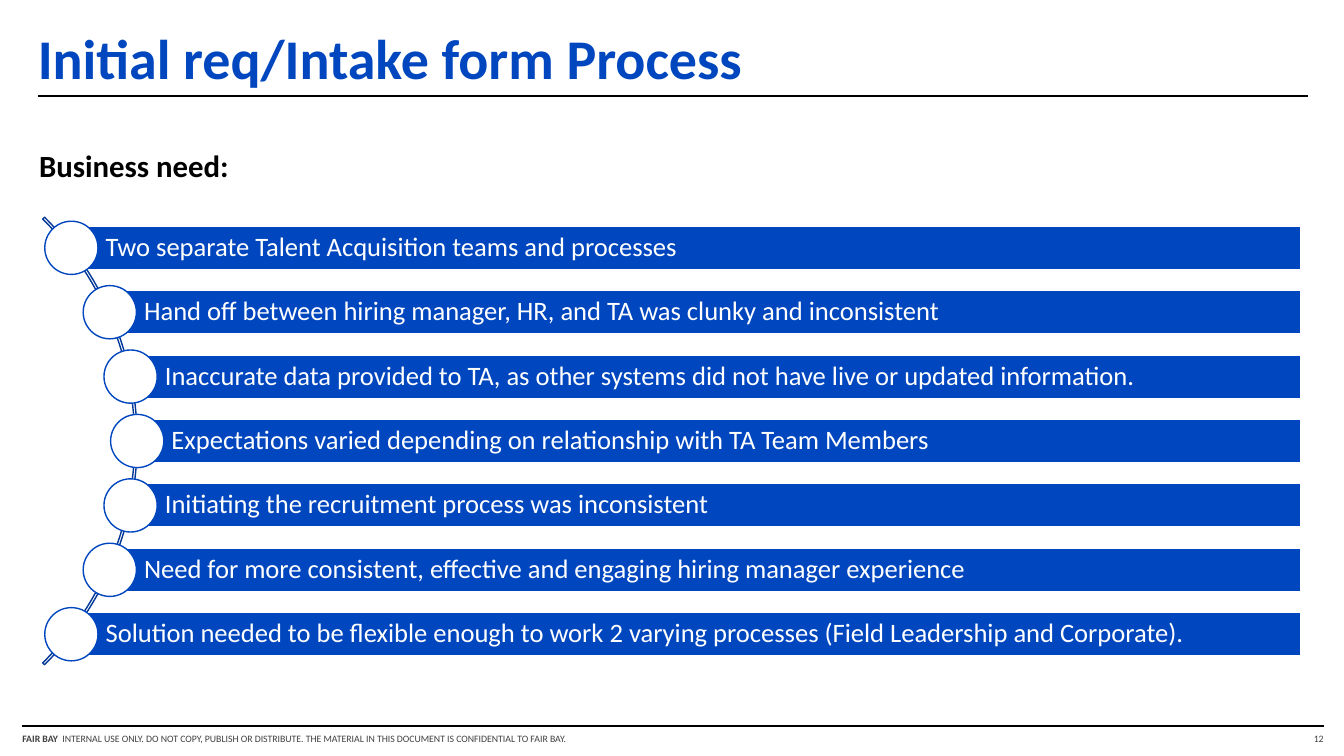
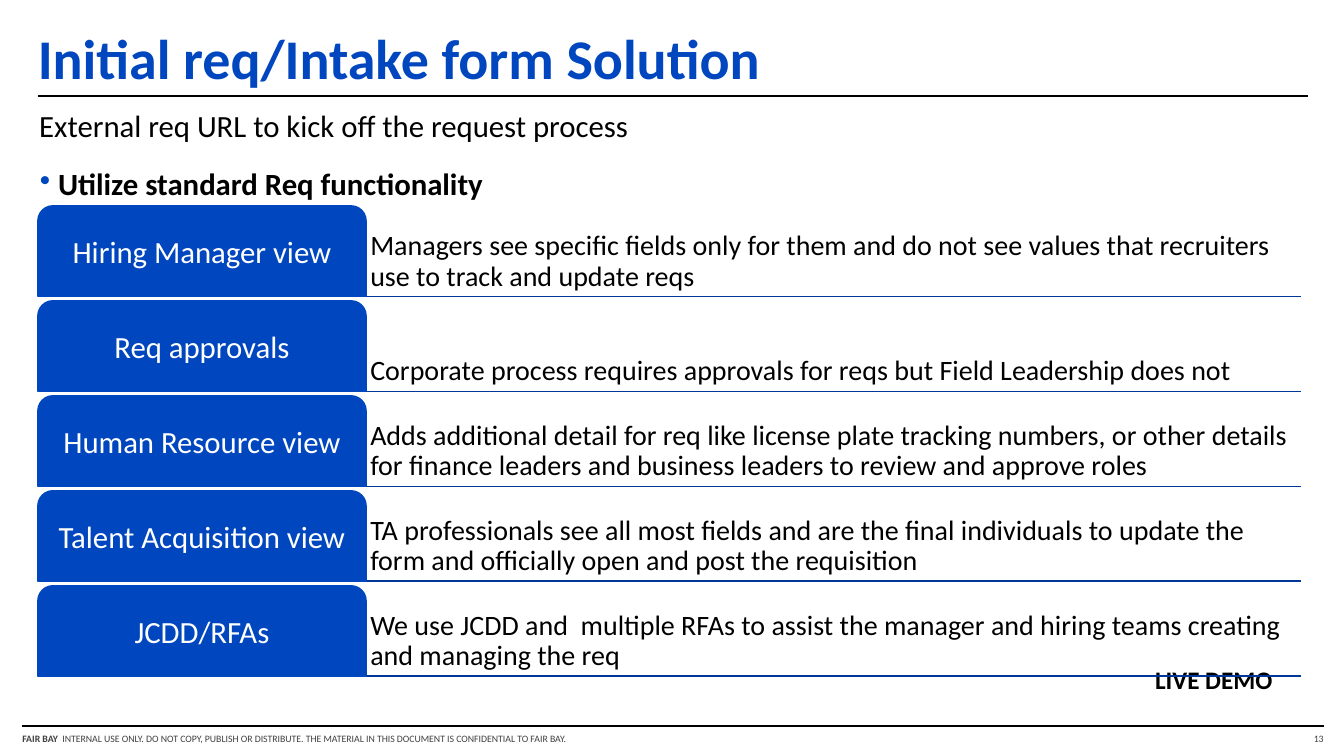
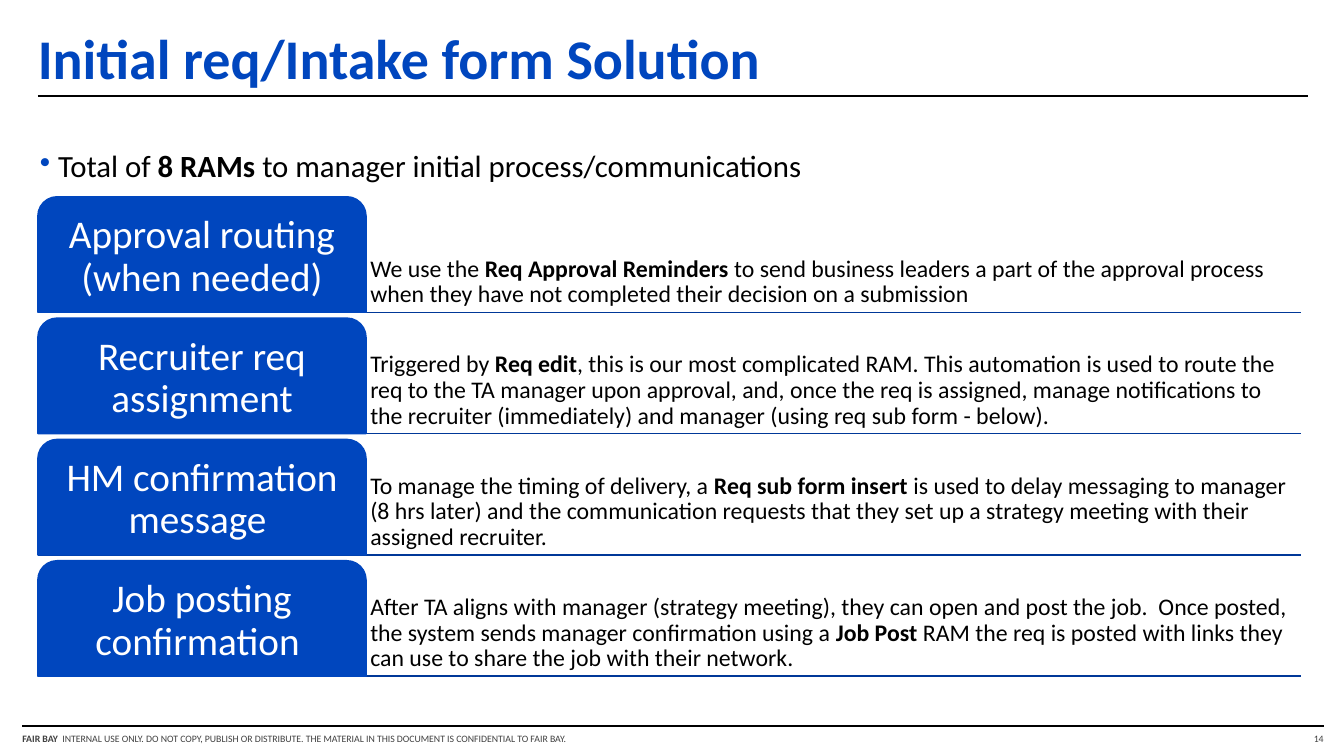
from math import sqrt

from lxml import etree
from pptx import Presentation
from pptx.dml.color import RGBColor
from pptx.enum import shapes, text
from pptx.oxml.ns import qn
from pptx.util import Pt

COLORS = {
    "blue": "0046BE",
    "navy": "003898",
    "black": "000000",
    "white": "FFFFFF",
    "gray": "404040",
}
FONT = "Calibri"
LEFT, RIGHT = 27, 929
TITLE = {"size": 40, "color": "blue", "bold": True}
BODY = {"size": 22, "color": "black"}
FOOTER = {"size": 7, "color": "gray"}
LEGAL_LINE = (
    "**FAIR BAY  **INTERNAL USE ONLY. DO NOT COPY, PUBLISH OR DISTRIBUTE. "
    "THE MATERIAL IN THIS DOCUMENT IS CONFIDENTIAL TO FAIR BAY."
)

BUSINESS_NEEDS = [
    "Two separate Talent Acquisition teams and processes",
    "Hand off between hiring manager, HR, and TA was clunky and inconsistent",
    "Inaccurate data provided to TA, as other systems did not have live or updated information.",
    "Expectations varied depending on relationship with TA Team Members",
    "Initiating the recruitment process was inconsistent",
    "Need for more consistent, effective and engaging hiring manager experience",
    "Solution needed to be flexible enough to work 2 varying processes (Field Leadership and Corporate).",
]
REQ_VIEWS = [
    ("Hiring Manager view",
     "Managers see specific fields only for them and do not see values that recruiters "
     "use to track and update reqs"),
    ("Req approvals",
     "Corporate process requires approvals for reqs but Field Leadership does not"),
    ("Human Resource view",
     "Adds additional detail for req like license plate tracking numbers, or other details "
     "for finance leaders and business leaders to review and approve roles"),
    ("Talent Acquisition view",
     "TA professionals see all most fields and are the final individuals to update the "
     "form and officially open and post the requisition"),
    ("JCDD/RFAs",
     "We use JCDD and  multiple RFAs to assist the manager and hiring teams creating "
     "and managing the req"),
]
AUTOMATIONS = [
    ("Approval routing (when needed)",
     "We use the **Req Approval Reminders **to send business leaders a part of the approval "
     "process when they have not completed their decision on a submission"),
    ("Recruiter req assignment",
     "Triggered by **Req edit**, this is our most complicated RAM. This automation is used to "
     "route the req to the TA manager upon approval, and, once the req is assigned, manage "
     "notifications to the recruiter (immediately) and manager (using req sub form - below)."),
    ("HM confirmation message ",
     "To manage the timing of delivery, a **Req sub form insert **is used to delay messaging "
     "to manager (8 hrs later) and the communication requests that they set up a strategy "
     "meeting with their assigned recruiter."),
    ("Job posting confirmation ",
     "After TA aligns with manager (strategy meeting), they can open and post the job.  Once "
     "posted, the system sends manager confirmation using a **Job Post **RAM the req is posted "
     "with links they can use to share the job with their network."),
]


def rgb(name):
    return RGBColor.from_string(COLORS[name])


def set_attributes(target, values):
    for name, value in values.items():
        setattr(target, name, value)


def format_frame(frame, insets=(0, 0, 0, 0), anchor="TOP", wrap=True):
    """Insets run left, top, right, bottom."""
    sides = ("margin_left", "margin_top", "margin_right", "margin_bottom")
    set_attributes(frame, {
        **{side: Pt(inset) for side, inset in zip(sides, insets)},
        "vertical_anchor": getattr(text.MSO_ANCHOR, anchor),
        "word_wrap": wrap,
        "auto_size": text.MSO_AUTO_SIZE.NONE,
    })


def write(paragraph, content, size, color, bold=False, align="LEFT", spacing=0.9):
    """Fill a paragraph; parts between ** marks switch to bold."""
    set_attributes(paragraph, {
        "alignment": getattr(text.PP_ALIGN, align),
        "line_spacing": spacing,
    })
    for index, part in enumerate(content.split("**")):
        if part:
            run = paragraph.add_run()
            run.text = part
            set_attributes(run.font, {
                "name": FONT, "size": Pt(size), "bold": bold or index % 2 == 1,
            })
            run.font.color.rgb = rgb(color)


def add_bullet(paragraph):
    properties = paragraph._p.get_or_add_pPr()
    properties.set("marL", str(Pt(13.5)))
    properties.set("indent", str(Pt(-13)))
    color = etree.SubElement(properties, qn("a:buClr"))
    etree.SubElement(color, qn("a:srgbClr")).set("val", COLORS["blue"])
    etree.SubElement(properties, qn("a:buChar")).set("char", "•")


def add_text(slide, box, content, style, **frame_format):
    frame = slide.shapes.add_textbox(*map(Pt, box)).text_frame
    format_frame(frame, **frame_format)
    write(frame.paragraphs[0], content, **style)
    return frame


def add_shape(slide, kind, box, line, fill=None):
    shape = slide.shapes.add_shape(getattr(shapes.MSO_SHAPE, kind), *map(Pt, box))
    shape.shadow.inherit = False
    if fill:
        shape.fill.solid()
        shape.fill.fore_color.rgb = rgb(fill)
    else:
        shape.fill.background()
    shape.line.color.rgb = rgb(line)
    shape.line.width = Pt(1)
    return shape


def add_rule(slide, left, right, y, color="black", width=1.25):
    rule = slide.shapes.add_connector(
        shapes.MSO_CONNECTOR.STRAIGHT, *map(Pt, (left, y, right, y)))
    rule.line.color.rgb = rgb(color)
    rule.line.width = Pt(width)
    etree.SubElement(rule._element.spPr, qn("a:effectLst"))


def add_slide(presentation, title, number):
    slide = presentation.slides.add_slide(presentation.slide_layouts[5])
    add_text(slide, (16, 523.5, 560, 11.5), LEGAL_LINE, {**FOOTER, "spacing": 1.0})
    add_rule(slide, LEFT, 934, 68.5)
    add_rule(slide, 16, 946, 518.5)
    placeholder = slide.shapes.title
    set_attributes(placeholder, {
        "left": Pt(LEFT), "top": Pt(23), "width": Pt(907), "height": Pt(44),
    })
    format_frame(placeholder.text_frame, anchor="MIDDLE")
    write(placeholder.text_frame.paragraphs[0], title, **TITLE, spacing=0.8)
    add_text(slide, (929, 523.5, 16.5, 11.5), str(number),
             {**FOOTER, "align": "RIGHT", "spacing": 1.0})
    return slide


def add_curved_list(slide, items):
    """Bars whose round markers sit on an arc centred left of the slide."""
    center_x, center_y, radius = -128, 315, 226
    pitch, bar_height, marker = 46, 31, 38
    arc = add_shape(slide, "BLOCK_ARC",
                    (center_x - radius, center_y - radius, 2 * radius, 2 * radius), "navy")
    for index, value in enumerate((189, 27, 0.004)):
        arc.adjustments[index] = value
    for index, item in enumerate(items):
        offset = (index - (len(items) - 1) / 2) * pitch
        x, y = center_x + sqrt(radius ** 2 - offset ** 2), center_y + offset
        bar = add_shape(slide, "RECTANGLE",
                        (x, y - bar_height / 2, RIGHT - x, bar_height), "white", "blue")
        format_frame(bar.text_frame, (24.5, 3.6, 3.6, 3.6), "MIDDLE")
        write(bar.text_frame.paragraphs[0], item, 19, "white")
        add_shape(slide, "OVAL", (x - marker / 2, y - marker / 2, marker, marker),
                  "blue", "white")


def add_tab_list(slide, rows, top, label_size, detail_size, inset):
    """Tabs with ruled descriptions, spaced by a twentieth of a row."""
    bottom, tab_width, gap = 483, 234.5, 0.05
    height = (bottom - top) / (len(rows) + gap * (len(rows) - 1))
    tops = [top + index * height * (1 + gap) for index in range(len(rows))]
    for y in tops:
        add_rule(slide, LEFT, RIGHT, y + height, "navy", 1)
    for y, (label, detail) in zip(tops, rows):
        detail_left = LEFT + tab_width
        add_text(slide, (detail_left, y, RIGHT - detail_left, height), detail,
                 {"size": detail_size, "color": "black"}, insets=(3,) * 4, anchor="BOTTOM")
        tab = add_shape(slide, "ROUND_2_SAME_RECTANGLE",
                        (LEFT, y, tab_width, height), "blue", "blue")
        tab.adjustments[0] = 0.167
        format_frame(tab.text_frame, (inset,) * 4, "MIDDLE")
        write(tab.text_frame.paragraphs[0], label, label_size, "white", align="CENTER")


def main():
    presentation = Presentation()
    presentation.slide_width, presentation.slide_height = Pt(960), Pt(540)

    slide = add_slide(presentation, "Initial req/Intake form Process", 12)
    add_text(slide, (28, 108, 905, 30), "Business need:", {**BODY, "bold": True})
    add_curved_list(slide, BUSINESS_NEEDS)

    slide = add_slide(presentation, "Initial req/Intake form Solution", 13)
    frame = add_text(slide, (28, 79, 905, 68),
                     "External req URL to kick off the request process", BODY)
    paragraph = frame.add_paragraph()
    add_bullet(paragraph)
    paragraph.space_before = Pt(18)
    write(paragraph, "Utilize standard Req functionality", **BODY, bold=True)
    add_text(slide, (818, 471, 111, 29), "LIVE DEMO",
             {"size": 18, "color": "black", "bold": True, "spacing": 1.0},
             insets=(7.2, 3.6, 7.2, 3.6), wrap=False)
    add_tab_list(slide, REQ_VIEWS, top=147, label_size=22, detail_size=20, inset=3.5)

    slide = add_slide(presentation, "Initial req/Intake form Solution", 14)
    frame = add_text(slide, (28, 108, 905, 30),
                     "Total of **8 RAMs **to manager initial process/communications", BODY)
    add_bullet(frame.paragraphs[0])
    add_tab_list(slide, AUTOMATIONS, top=140.5, label_size=28, detail_size=17, inset=4.3)

    presentation.save("out.pptx")


if __name__ == "__main__":
    main()
